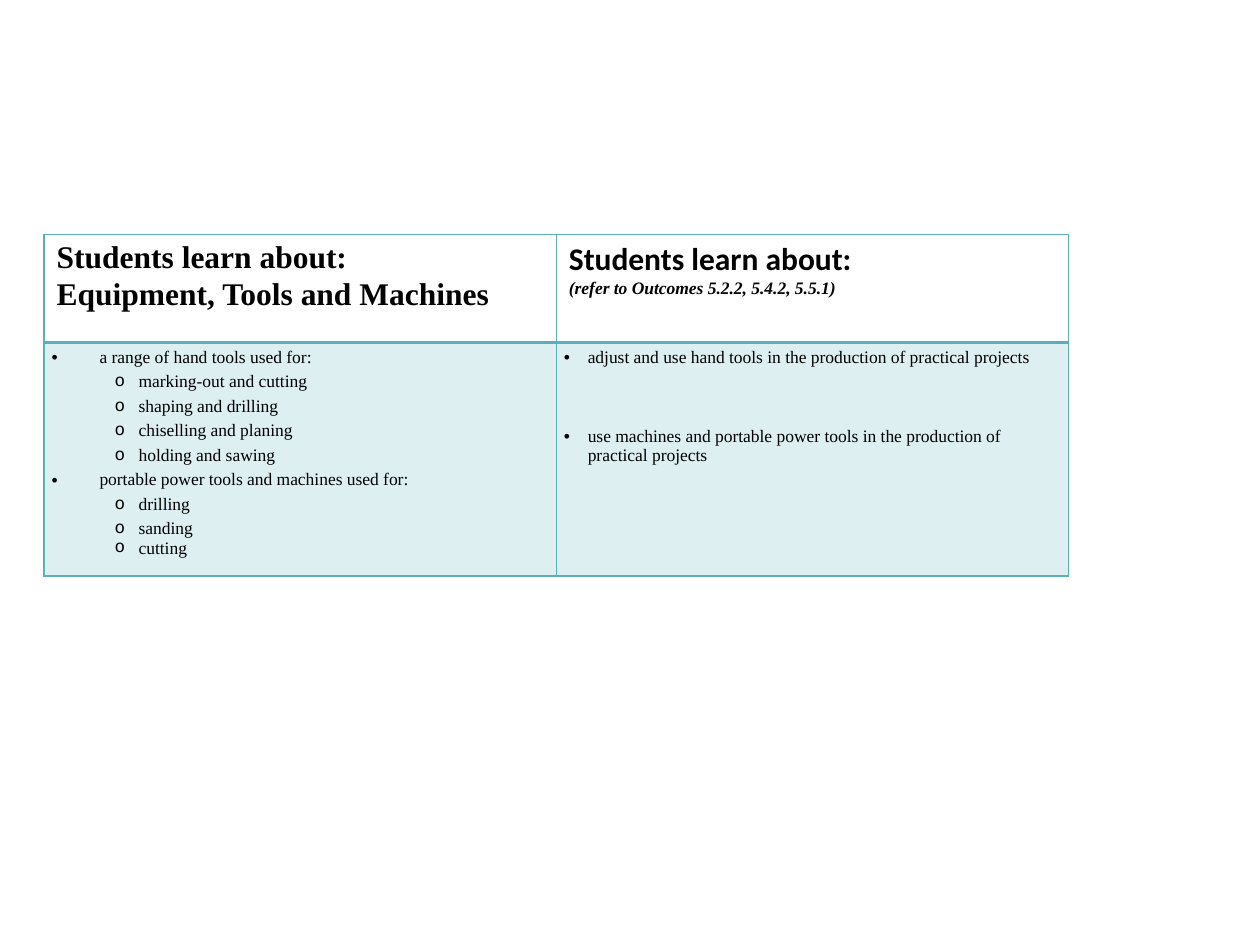
"""Build a slide with a two-column syllabus table of tools and machines."""
from dataclasses import dataclass

from lxml import etree
from pptx import Presentation
from pptx.dml.color import RGBColor
from pptx.oxml.ns import qn
from pptx.table import _Cell
from pptx.util import Inches, Pt


@dataclass(frozen=True)
class Theme:
    teal: str = "59B0B9"
    ink: str = "000000"
    serif: str = "Times New Roman"
    sans: str = "Calibri"
    heading: int = 18
    body: int = 10
    tint: int = 20
    thin: int = 1
    thick: int = 2


@dataclass(frozen=True)
class Bullet:
    char: str
    font: str
    margin: float
    hang: float


@dataclass(frozen=True)
class Line:
    words: str
    size: int
    font: str
    bold: bool = False
    italic: bool = False
    bullet: Bullet | None = None
    level: int = 0
    spacing: int | None = 14
    before: int = 0


THEME = Theme()
TOPIC = Bullet("•", "Arial", 0.38, 0.38)
DETAIL = Bullet("o", "Courier New", 0.69, 0.19)
SKILL = Bullet("•", "Arial", 0.19, 0.19)


def heading(words: str, font: str = THEME.serif, before: int = 0) -> Line:
    """Return a bold heading line."""
    return Line(words, THEME.heading, font, bold=True, spacing=None, before=before)


def item(words: str, bullet: Bullet, spacing: int | None = 14, before: int = 0) -> Line:
    """Return a bulleted line."""
    return Line(words, THEME.body, THEME.serif, bullet=bullet,
                level=int(bullet is DETAIL), spacing=spacing, before=before)


HEADINGS = [
    [heading("Students learn about:"),
     heading("Equipment, Tools and Machines", before=1)],
    [heading("Students learn about:", THEME.sans),
     Line("(refer to Outcomes 5.2.2, 5.4.2, 5.5.1)", THEME.body, THEME.serif,
          bold=True, italic=True, spacing=None)],
]
CONTENT = [
    [item("a range of hand tools used for:", TOPIC),
     item("marking-out and cutting", DETAIL),
     item("shaping and drilling", DETAIL),
     item("chiselling and planing", DETAIL),
     item("holding and sawing", DETAIL),
     item("portable power tools and machines used for:", TOPIC),
     item("drilling", DETAIL),
     item("sanding", DETAIL),
     item("cutting", DETAIL, spacing=None)],
    [item("adjust and use hand tools in the production of practical projects", SKILL),
     item("use machines and portable power tools in the production of practical projects",
          SKILL, spacing=None, before=34)],
]


def write_lines(cell: _Cell, lines: list[Line]) -> None:
    """Fill a cell with formatted paragraphs."""
    frame = cell.text_frame
    frame.text = "\n".join(line.words for line in lines)
    for paragraph, line in zip(frame.paragraphs, lines):
        paragraph.level = line.level
        if line.spacing:
            paragraph.line_spacing = Pt(line.spacing)
        if line.before:
            paragraph.space_before = Pt(line.before)
        if line.bullet:
            props = paragraph._p.get_or_add_pPr()
            props.set("marL", str(Inches(line.bullet.margin)))
            props.set("indent", str(-Inches(line.bullet.hang)))
            etree.SubElement(props, qn("a:buFont"), typeface=line.bullet.font)
            etree.SubElement(props, qn("a:buChar"), char=line.bullet.char)
        for run in paragraph.runs:
            run.font.name = line.font
            run.font.size = Pt(line.size)
            run.font.bold = line.bold
            run.font.italic = line.italic
            run.font.color.rgb = RGBColor.from_string(THEME.ink)


def draw_borders(cell: _Cell, top: int, bottom: int) -> None:
    """Outline a cell in teal with the given top and bottom widths."""
    props = cell._tc.get_or_add_tcPr()
    widths = {"lnL": THEME.thin, "lnR": THEME.thin, "lnT": top, "lnB": bottom}
    for side, width in widths.items():
        border = etree.SubElement(props, qn(f"a:{side}"), w=str(Pt(width)))
        paint = etree.SubElement(border, qn("a:solidFill"))
        etree.SubElement(paint, qn("a:srgbClr"), val=THEME.teal)


def tint_cell(cell: _Cell) -> None:
    """Give a cell a translucent teal fill."""
    cell.fill.solid()
    cell.fill.fore_color.rgb = RGBColor.from_string(THEME.teal)
    color = cell._tc.tcPr.find(f"{qn('a:solidFill')}/{qn('a:srgbClr')}")
    etree.SubElement(color, qn("a:alpha"), val=str(THEME.tint * 1000))


def main() -> None:
    """Build and save the slide."""
    deck = Presentation()
    deck.slide_width, deck.slide_height = Inches(10), Inches(7.5)
    slide = deck.slides.add_slide(deck.slide_layouts[6])
    syllabus = slide.shapes.add_table(
        2, 2, Inches(0.35), Inches(1.86), Inches(8.13), Inches(2.71)).table
    syllabus.first_row = syllabus.horz_banding = False
    for row, height in zip(syllabus.rows, (0.86, 1.85)):
        row.height = Inches(height)

    for column, (title, content) in enumerate(zip(HEADINGS, CONTENT)):
        header, body = syllabus.cell(0, column), syllabus.cell(1, column)
        write_lines(header, title)
        draw_borders(header, THEME.thin, THEME.thick)
        header.fill.background()
        body.margin_left = body.margin_right = Inches(0.06)
        body.margin_top = body.margin_bottom = 0
        write_lines(body, content)
        draw_borders(body, THEME.thick, THEME.thin)
        tint_cell(body)

    deck.save("out.pptx")


if __name__ == "__main__":
    main()
